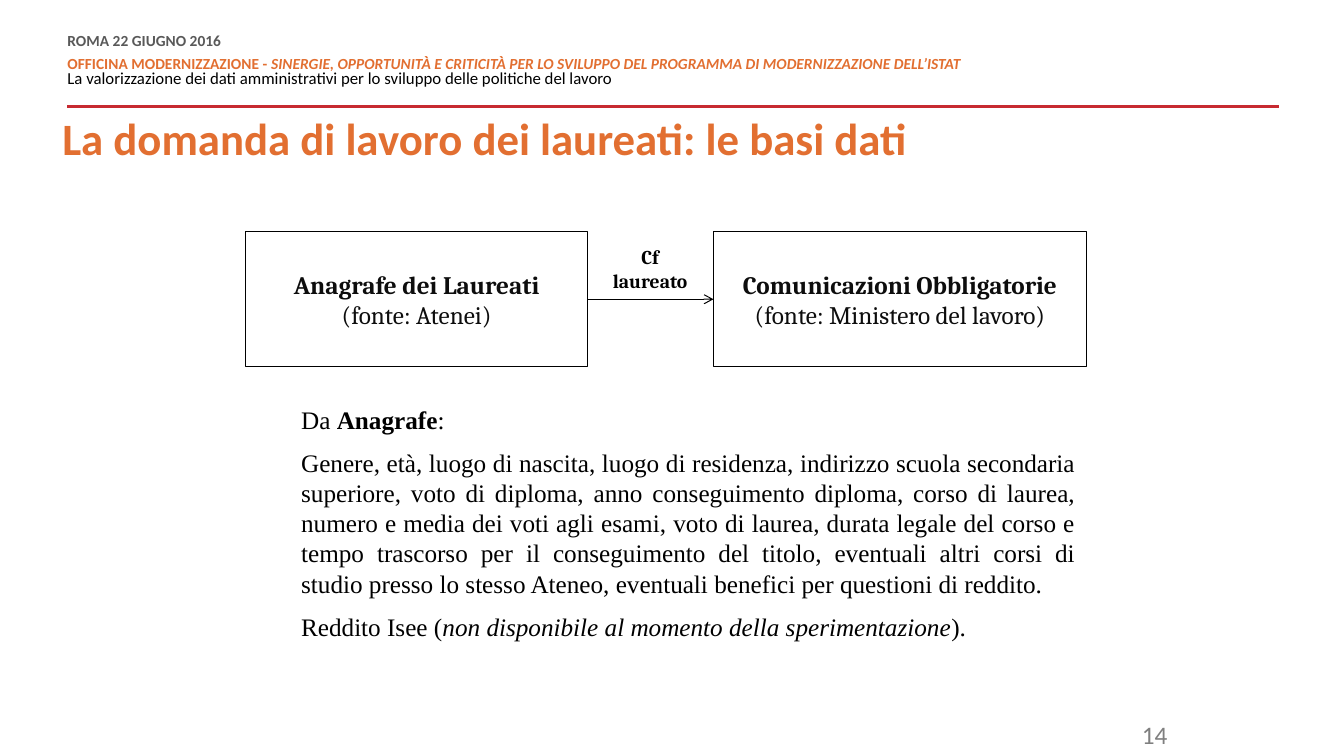
from lxml.etree import SubElement
from pptx import Presentation
from pptx.dml.color import RGBColor
from pptx.enum.shapes import MSO_CONNECTOR, MSO_SHAPE
from pptx.enum.text import MSO_ANCHOR, MSO_AUTO_SIZE, PP_ALIGN
from pptx.oxml.ns import qn
from pptx.util import Cm, Pt

ORANGE, RED, GREY, PALE = "E26F31", "C72A31", "595959", "7F7F7F"
BLACK, INK = "000000", "0D0D0D"
BOLD, ITALIC = {"bold": True}, {"italic": True}
TIGHT = dict.fromkeys(
    ("margin_left", "margin_top", "margin_right", "margin_bottom"), 0)


def tint(color, value):
    color.rgb = RGBColor.from_string(value)


def apply(target, values):
    for key, value in values.items():
        setattr(target, key, value)


class Deck:
    def __init__(self):
        self.file = Presentation()
        self.file.slide_width, self.file.slide_height = Cm(33.87), Cm(19.05)
        self.slide = self.file.slides.add_slide(self.file.slide_layouts[5])
        self.shapes = self.slide.shapes

    def fill(self, shape, paras, font, size, color, para=None, frame=None):
        """Put text in a shape; each paragraph is (runs, format), each run (text, format)."""
        text = shape.text_frame
        apply(text, {"word_wrap": True, "auto_size": MSO_AUTO_SIZE.NONE,
                     "vertical_anchor": MSO_ANCHOR.TOP, **(frame or {})})
        for i, (runs, extra) in enumerate(paras):
            p = text.add_paragraph() if i else text.paragraphs[0]
            apply(p, {"alignment": PP_ALIGN.LEFT, **(para or {}), **extra})
            for words, style in runs:
                run = p.add_run()
                run.text = words
                style = {"name": font, "size": Pt(size), **style}
                tint(run.font.color, style.pop("color", color))
                apply(run.font, style)

    def title(self, place, words):
        shape = self.shapes.title
        apply(shape, dict(zip(("left", "top", "width", "height"), map(Cm, place))))
        self.fill(shape, [([(words, BOLD)], {})], "Calibri", 32, ORANGE,
                  {"line_spacing": 0.9}, TIGHT)

    def text(self, place, *args, **formats):
        self.fill(self.shapes.add_textbox(*map(Cm, place)), *args, **formats)

    def box(self, place, name, source):
        shape = self.shapes.add_shape(MSO_SHAPE.RECTANGLE, *map(Cm, place))
        shape.shadow.inherit = False
        shape.fill.background()
        tint(shape.line.color, BLACK)
        shape.line.width = Pt(0.75)
        self.fill(shape, [([(name, BOLD)], {}), ([(source, {})], {})],
                  "Cambria", 18, INK, {"alignment": PP_ALIGN.CENTER},
                  {"vertical_anchor": MSO_ANCHOR.MIDDLE})

    def line(self, start, end, y, color, width, arrow=False):
        line = self.shapes.add_connector(
            MSO_CONNECTOR.STRAIGHT, Cm(start), Cm(y), Cm(end), Cm(y))
        tint(line.line.color, color)
        line.line.width = Pt(width)
        props = line._element.spPr
        if arrow:
            SubElement(props.find(qn("a:ln")), qn("a:tailEnd"), type="arrow")
        SubElement(props, qn("a:effectLst"))


def main():
    deck = Deck()
    deck.line(32.23, 1.68, 2.69, RED, 2)
    deck.text((1.7, 0.86, 22.86, 1.78), [
        ([("ROMA 22 GIUGNO 2016", {"color": GREY, **BOLD})], {"space_after": Pt(6)}),
        ([("OFFICINA MODERNIZZAZIONE - ", BOLD),
          ("SINERGIE, OPPORTUNITÀ E CRITICITÀ PER LO SVILUPPO DEL PROGRAMMA "
           "DI MODERNIZZAZIONE DELL’ISTAT", {**BOLD, **ITALIC})], {}),
        ([("La valorizzazione dei dati amministrativi per lo sviluppo delle "
           "politiche del lavoro", {"size": Pt(12), "color": BLACK})], {}),
    ], "Calibri", 11, ORANGE, para={"line_spacing": Pt(10.8)}, frame=TIGHT)
    deck.text((26.67, 18.01, 3, 0.89), [([("14", {})], {})], "Calibri", 18, PALE,
              para={"alignment": PP_ALIGN.RIGHT})
    deck.title((1.57, 2.95, 29.72, 1.68),
               "La domanda di lavoro dei laureati: le basi dati")

    top, high = 5.84, 3.4
    left, wide, right = 6.2, 8.6, 17.98
    deck.box((left, top, wide, high), "Anagrafe dei Laureati", "(fonte: Atenei)")
    deck.box((right, top, 9.4, high), "Comunicazioni Obbligatorie",
             "(fonte: Ministero del lavoro)")
    deck.line(left + wide, right, top + high / 2, BLACK, 0.75, arrow=True)
    deck.text((14.99, 6.05, 2.79, 1.45), [([("Cf laureato", BOLD)], {})],
              "Cambria", 14, BLACK, para={"alignment": PP_ALIGN.CENTER})

    space = {"space_before": Pt(9)}
    deck.text((6.07, 10.06, 21.29, 6.4), [
        ([("Da ", {}), ("Anagrafe", BOLD), (":", {})], {}),
        ([("Genere, età, luogo di nascita, luogo di residenza, indirizzo scuola "
           "secondaria superiore, voto di diploma, anno conseguimento diploma, "
           "corso di laurea, numero e media dei voti agli esami, voto di laurea, "
           "durata legale del corso e tempo trascorso per il conseguimento del "
           "titolo, eventuali altri corsi di studio presso lo stesso Ateneo, "
           "eventuali benefici per questioni di reddito.", {})], space),
        ([("Reddito Isee (", {}),
          ("non disponibile al momento della sperimentazione", ITALIC),
          (").", {})], space),
    ], "Times New Roman", 18, BLACK, para={"alignment": PP_ALIGN.JUSTIFY},
        frame={"margin_left": Cm(1.52)})
    deck.file.save("out.pptx")


if __name__ == "__main__":
    main()
